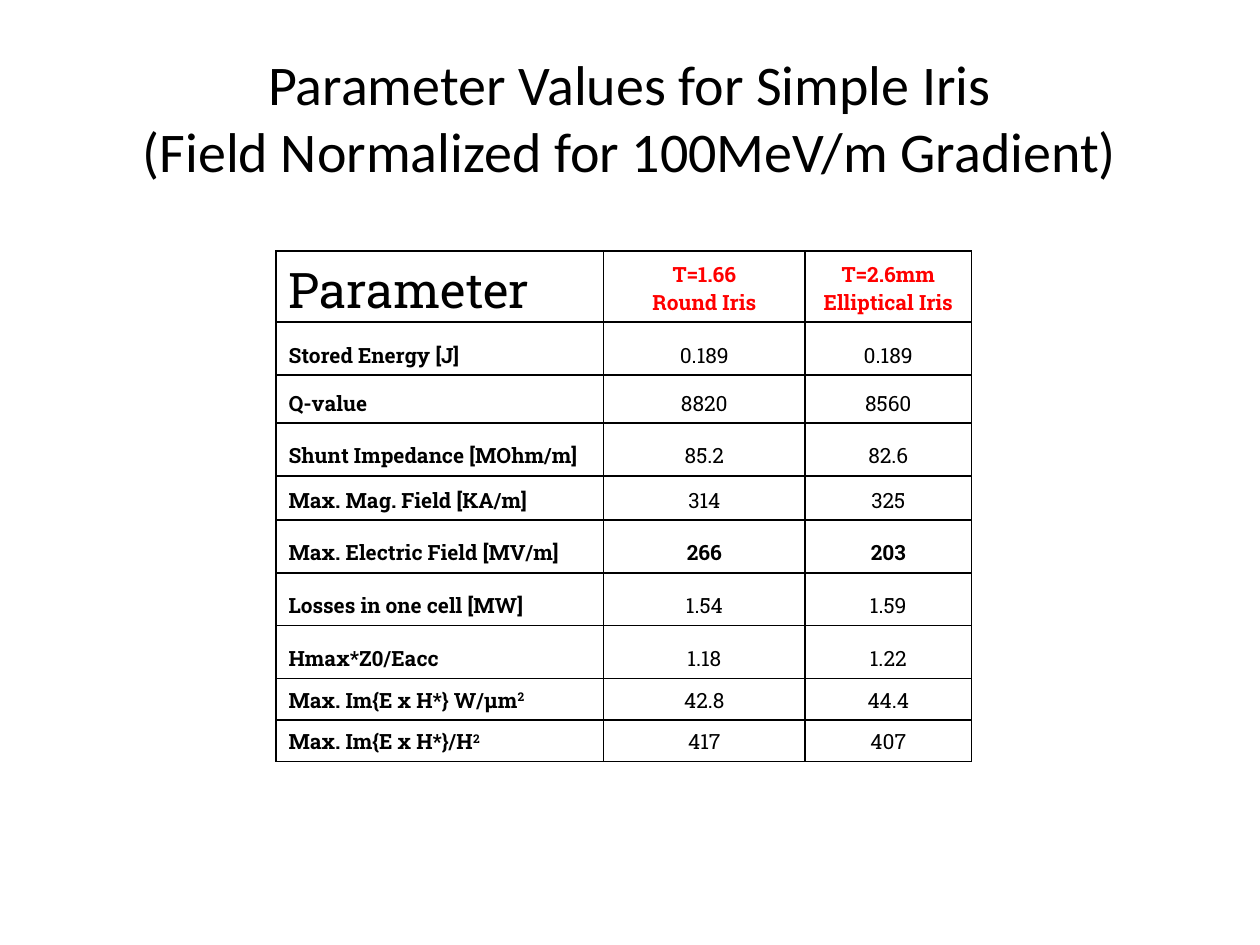
from pptx import Presentation
from pptx.dml.color import RGBColor
from pptx.enum.text import MSO_ANCHOR as Anchor, PP_ALIGN as Align
from pptx.oxml import parse_xml
from pptx.oxml.ns import nsdecls
from pptx.util import Inches, Pt

HEADS = [["Parameter"], ["T=1.66", "Round Iris"], ["T=2.6mm", "Elliptical Iris"]]
ROWS = [
    ("Stored Energy [J]", "", "0.189", "0.189", 0.42),
    ("Q-value", "", "8820", "8560", 0.38),
    ("Shunt Impedance [MOhm/m]", "", "85.2", "82.6", 0.42),
    ("Max. Mag. Field [KA/m]", "", "314", "325", 0.35),
    ("Max. Electric Field [MV/m]", "", "266", "203", 0.42),
    ("Losses in one cell [MW]", "", "1.54", "1.59", 0.42),
    ("Hmax*Z0/Eacc", "", "1.18", "1.22", 0.42),
    ("Max. Im{E x H*} W/µm", "2", "42.8", "44.4", 0.33),
    ("Max. Im{E x H*}/H", "2", "417", "407", 0.33),
]
KEY = "Max. Electric Field [MV/m]"


def color(code):
    return RGBColor.from_string(code)


class Deck:
    ink, red = "000000", "FF0000"
    head, body = "Calibri", "Roboto Slab"

    def __init__(self):
        self.show = Presentation()
        self.show.slide_width, self.show.slide_height = Inches(10), Inches(7.5)
        self.slide = self.show.slides.add_slide(self.show.slide_layouts[6])

    def run(self, para, text, size, font, hue=ink, bold=False, sup=False):
        run = para.add_run()
        run.text = text
        run.font.size, run.font.name, run.font.bold = Pt(size), font, bold
        run.font.color.rgb = color(hue)
        if sup:
            run._r.get_or_add_rPr().set("baseline", "30000")

    def title(self, lines, left, top, width, height):
        box = self.slide.shapes.add_textbox(
            Inches(left), Inches(top), Inches(width), Inches(height))
        frame = box.text_frame
        frame.word_wrap, frame.vertical_anchor = True, Anchor.MIDDLE
        para = frame.paragraphs[0]
        para.alignment = Align.CENTER
        for i, line in enumerate(lines):
            if i:
                para.add_line_break()
            self.run(para, line, 32, self.head)

    def table(self, left, top, cols, rows):
        grid = self.slide.shapes.add_table(
            len(rows), len(cols), Inches(left), Inches(top),
            Inches(sum(cols)), Inches(sum(rows))).table
        grid.first_row = grid.horz_banding = False
        for col, width in zip(grid.columns, cols):
            col.width = Inches(width)
        for row, height in zip(grid.rows, rows):
            row.height = Inches(height)
        for cell in grid.iter_cells():
            cell.vertical_anchor = Anchor.BOTTOM
            cell.fill.background()
            self.border(cell)
        return grid

    def border(self, cell):
        props = cell._tc.get_or_add_tcPr()
        for i, side in enumerate("LRTB"):
            props.insert(i, parse_xml(
                f'<a:ln{side} {nsdecls("a")} w="{Pt(1)}"><a:solidFill>'
                f'<a:srgbClr val="{self.ink}"/></a:solidFill></a:ln{side}>'))

    def hang(self, para):
        props = para._p.get_or_add_pPr()
        props.set("marL", str(Inches(0.38)))
        props.set("indent", str(-Inches(0.38)))

    def label(self, cell, text, sup="", size=12, bold=True):
        para = cell.text_frame.paragraphs[0]
        self.hang(para)
        self.run(para, text, size, self.body, bold=bold)
        if sup:
            self.run(para, sup, size, self.body, bold=bold, sup=True)

    def value(self, cell, text, bold):
        para = cell.text_frame.paragraphs[0]
        para.alignment = Align.CENTER
        self.hang(para)
        self.run(para, text, 12, self.body, bold=bold)

    def header(self, cell, lines):
        frame = cell.text_frame
        for i, line in enumerate(lines):
            para = frame.add_paragraph() if i else frame.paragraphs[0]
            para.alignment = Align.CENTER
            self.run(para, line, 12, self.body, self.red, True)


def main():
    deck = Deck()
    deck.title(["Parameter Values for Simple Iris",
                "(Field Normalized for 100MeV/m Gradient)"], 0.5, 0.3, 9, 1.25)
    grid = deck.table(2.19, 1.99, [2.6, 1.6, 1.32],
                      [0.46] + [row[-1] for row in ROWS])
    deck.label(grid.cell(0, 0), HEADS[0][0], size=28, bold=False)
    for c in (1, 2):
        deck.header(grid.cell(0, c), HEADS[c])
    for r, (name, sup, first, second, _) in enumerate(ROWS, 1):
        deck.label(grid.cell(r, 0), name, sup)
        for c, text in enumerate((first, second), 1):
            deck.value(grid.cell(r, c), text, name == KEY)
    deck.show.save("out.pptx")


if __name__ == "__main__":
    main()
